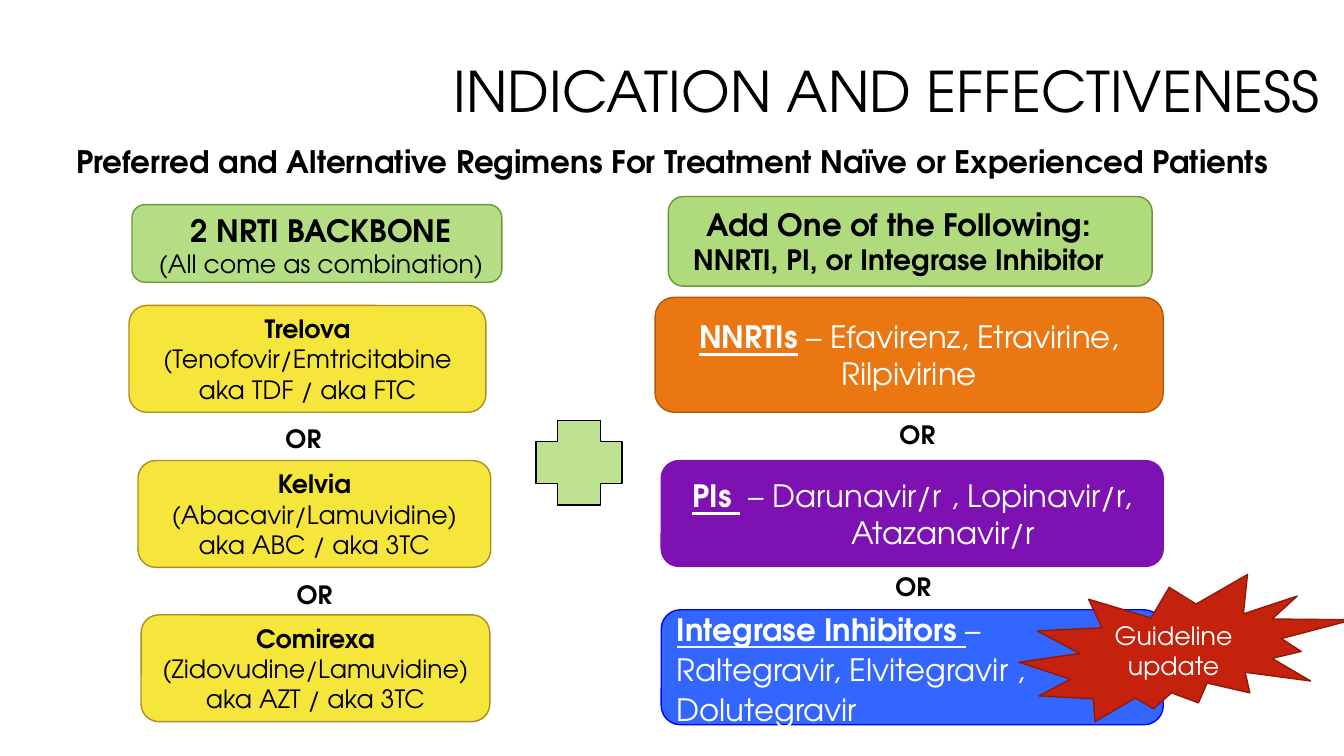
from pptx import Presentation
from pptx import util as u
from pptx.dml import color
from pptx.enum import shapes, text
from pptx.oxml import ns
from lxml import etree

THEME = {
    "font": "TeX Gyre Adventor",
    "sizes": {"title": 40, "subtitle": 22.1, "large": 22, "medium": 20, "small": 18},
    "colors": {
        "black": "000000", "white": "FFFFFF", "header": "92CE4A", "header_line": "6C9837",
        "yellow": "F6E53A", "yellow_line": "AF8C24", "plus": "BEE292",
        "orange": "EB7712", "orange_line": "AE580D", "purple": "7D11B1",
        "blue": "3366FF", "blue_line": "0000FF", "red": "C4220D", "red_line": "91190A",
    },
}

TITLE = "INDICATION AND EFFECTIVENESS"
SUBTITLE = "Preferred and Alternative Regimens For Treatment Naïve or Experienced Patients"
HEADER_PANELS = [
    ((477.4, 140.4, 345.6, 64), 72),
    ((94.3, 146.2, 264.2, 55.4), 68),
]
HEADER_TEXTS = [
    ((97.2, 147.6, 264.2, 55.4), [
        [("2 NRTI BACKBONE", "large", "b")],
        [("(All come as combination)", "small", "")],
    ]),
    ((476.6, 143.3, 330.5, 58.3), [
        [("Add One of the Following: ", "large", "b"),
         ("NNRTI, PI, or Integrase Inhibitor", "medium", "b")],
    ]),
]
BACKBONES = [
    ((92.2, 218.2, 254.9), "Trelova", "(Tenofovir/Emtricitabine", "aka TDF / aka FTC"),
    ((98.6, 329, 252), "Kelvia", "(Abacavir/Lamuvidine)", "aka ABC / aka 3TC"),
    ((100.8, 439.2, 249.1), "Comirexa", "(Zidovudine/Lamuvidine)", "aka AZT / aka 3TC"),
]
BACKBONE_HEIGHT = 76.3
ADDITIONS = [
    ((468, 212.4, 362.9, 82.1), "orange", "orange_line", [
        [("NNRTIs", "large", "bu"), (" – Efavirenz, Etravirine, Rilpivirine", "large", "")],
    ], {}),
    ((472.3, 329, 358.6, 75.6), "purple", "purple", [
        [("PIs ", "large", "bu"), (" – Darunavir/r , Lopinavir/r,", "large", "")],
        [("Atazanavir/r", "large", "")],
    ], {"last_indent": 44}),
    ((472.3, 435.6, 358.6, 82.1), "blue", "blue_line", [
        [("Integrase Inhibitors ", "large", "bu"), ("–", "large", "")],
        [("Raltegravir, Elvitegravir , Dolutegravir", "large", "")],
    ], {"align": "LEFT", "spacing": u.Pt(28.6)}),
]
OR_PLACES = [(92.9, 298.8), (100.8, 410.4), (531.4, 295.9), (528.5, 404.6)]
OR_SIZE = (247.7, 28.8)
PLUS_PLACE = (383, 300.2, 61.2, 60.5)
BURST_PLACE = (727.9, 410.4, 238.3, 105.1)
BURST_TEXT = "Guideline update"


def rgb(name):
    return color.RGBColor.from_string(THEME["colors"][name])


def apply(target, values):
    for name, value in values.items():
        setattr(target, name, value)


def write(box, lines, ink="black", anchor="MIDDLE", align="CENTER", spacing=None, last_indent=0):
    frame = box.text_frame
    apply(frame, {"word_wrap": True, "vertical_anchor": getattr(text.MSO_ANCHOR, anchor)})
    for index, line in enumerate(lines):
        para = frame.add_paragraph() if index else frame.paragraphs[0]
        apply(para, {"alignment": getattr(text.PP_ALIGN, align), "line_spacing": spacing})
        for words, size, style in line:
            span = para.add_run()
            span.text = words
            apply(span.font, {
                "name": THEME["font"], "size": u.Pt(THEME["sizes"][size]),
                "bold": "b" in style, "underline": "u" in style,
            })
            span.font.color.rgb = rgb(ink)
    if last_indent:
        para._p.get_or_add_pPr().set("marL", str(u.Pt(last_indent)))


def add_panel(page, kind, place, fill, line, opacity=100):
    panel = page.shapes.add_shape(getattr(shapes.MSO_SHAPE, kind), *map(u.Pt, place))
    panel.shadow.inherit = False
    panel.fill.solid()
    panel.fill.fore_color.rgb = rgb(fill)
    panel.line.color.rgb = rgb(line)
    panel.line.width = u.Pt(1)
    if opacity < 100:
        tint = panel._element.spPr.find(ns.qn("a:solidFill"))[0]
        etree.SubElement(tint, ns.qn("a:alpha")).set("val", str(opacity * 1000))
    return panel


def add_text(page, place, lines, **layout):
    box = page.shapes.add_textbox(*map(u.Pt, place))
    write(box, lines, **layout)


def main():
    deck = Presentation()
    apply(deck, {"slide_width": u.Pt(960), "slide_height": u.Pt(540)})
    page = deck.slides.add_slide(deck.slide_layouts[6])

    for place, opacity in HEADER_PANELS:
        add_panel(page, "ROUNDED_RECTANGLE", place, "header", "header_line", opacity)
    add_text(page, (271.4, 16.6, 678.2, 101.5), [[(TITLE, "title", "")]],
             align="RIGHT", spacing=0.9)
    add_text(page, (19.4, 103.7, 920.9, 47.5), [[(SUBTITLE, "subtitle", "b")]],
             anchor="TOP", spacing=0.8)
    for place, lines in HEADER_TEXTS:
        add_text(page, place, lines, anchor="TOP")

    for place, name, *details in BACKBONES:
        card = add_panel(page, "ROUNDED_RECTANGLE", (*place, BACKBONE_HEIGHT),
                         "yellow", "yellow_line")
        write(card, [[(name, "small", "b")]] + [[(detail, "small", "")] for detail in details])
    for place in OR_PLACES:
        add_text(page, place + OR_SIZE, [[("OR", "small", "b")]], anchor="TOP")
    add_panel(page, "CROSS", PLUS_PLACE, "plus", "black")
    for place, fill, line, lines, layout in ADDITIONS:
        card = add_panel(page, "ROUNDED_RECTANGLE", place, fill, line)
        write(card, lines, ink="white", **layout)
    burst = add_panel(page, "EXPLOSION2", BURST_PLACE, "red", "red_line")
    write(burst, [[(BURST_TEXT, "small", "")]], ink="white")
    deck.save("out.pptx")


if __name__ == "__main__":
    main()
